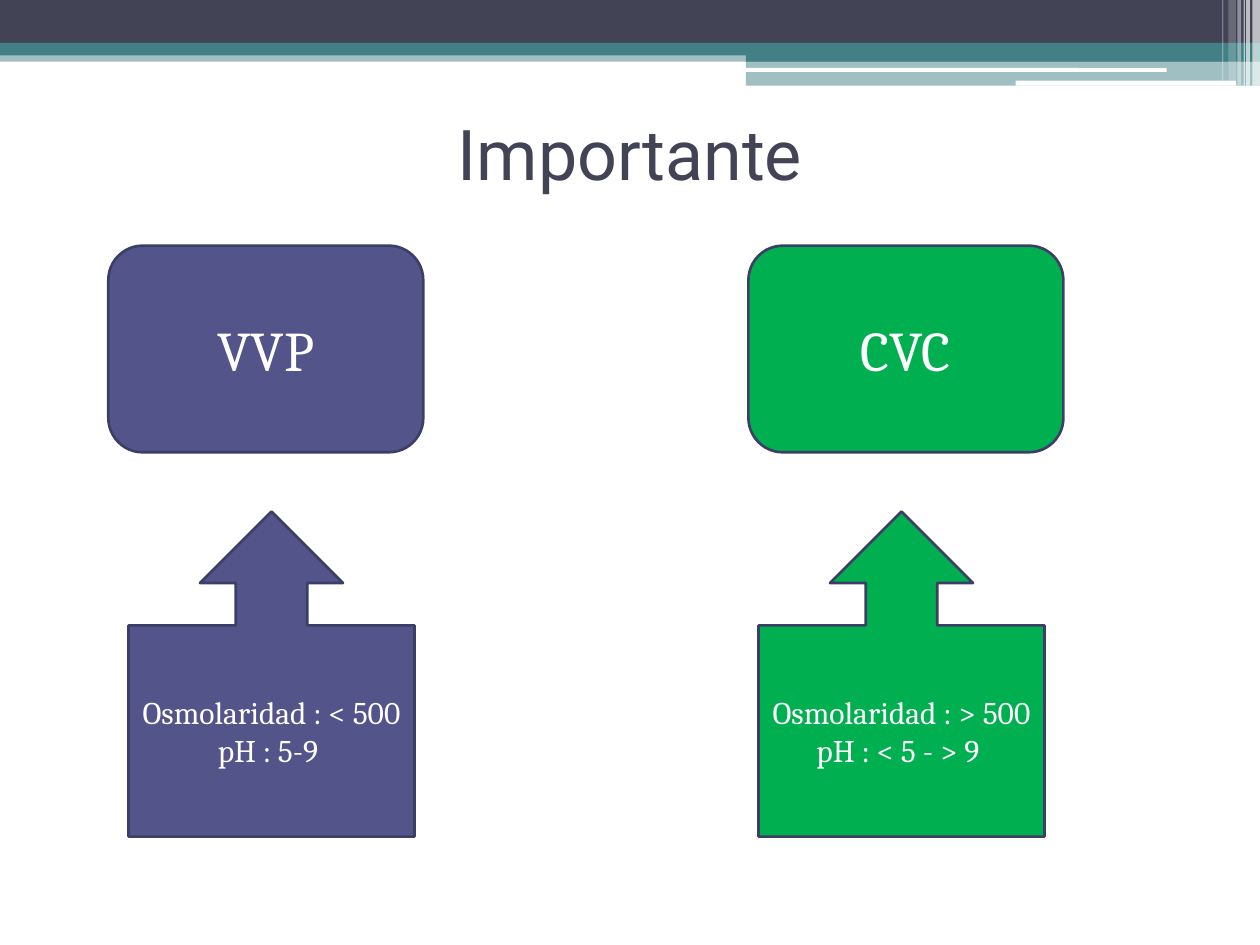
"""Build the "Importante" slide comparing VVP and CVC osmolarity and pH."""
from lxml import etree
from pptx import Presentation, util as u
from pptx.dml.color import RGBColor
from pptx.enum import shapes, text
from pptx.oxml.ns import qn

KINDS = shapes.MSO_SHAPE
TEAL, SLATE, WHITE = "438086", "424456", "FFFFFF"
PURPLE, GREEN, OUTLINE = "53548A", "00B050", "3D3E66"


def add_block(page, kind, place, fill, opacity=100):
    block = page.shapes.add_shape(kind, *map(u.Inches, place))
    block.shadow.inherit = False
    block.fill.solid()
    block.fill.fore_color.rgb = RGBColor.from_string(fill)
    block.line.fill.background()
    if opacity < 100:
        color = next(block.element.spPr.iter(qn("a:srgbClr")))
        etree.SubElement(color, qn("a:alpha"), val=str(opacity * 1000))
    return block


def write_lines(box, lines, size, font, color):
    frame = box.text_frame
    frame.word_wrap = True
    frame.vertical_anchor = text.MSO_ANCHOR.MIDDLE
    style = {"size": u.Pt(size), "name": font}
    for index, line in enumerate(lines):
        para = frame.paragraphs[0] if index == 0 else frame.add_paragraph()
        para.alignment = text.PP_ALIGN.CENTER
        span = para.add_run()
        span.text = line
        for name, value in style.items():
            setattr(span.font, name, value)
        span.font.color.rgb = RGBColor.from_string(color)


deck = Presentation()
deck.slide_width, deck.slide_height = u.Inches(10), u.Inches(7.5)
page = deck.slides.add_slide(deck.slide_layouts[6])

header_bands = [
    ((0, 0.4, 10, 0.09), TEAL, 50),
    ((0, 0, 10, 0.34), SLATE, 100),
    ((0, 0.34, 10, 0.1), TEAL, 100),
    ((5.92, 0.39, 4.08, 0.1), TEAL, 100),
    ((5.92, 0.48, 4.08, 0.2), TEAL, 50),
]
for place, fill, opacity in header_bands:
    add_block(page, KINDS.RECTANGLE, place, fill, opacity)

for place in [(5.91, 0.54, 3.35, 0.03), (8.06, 0.64, 1.75, 0.04)]:
    add_block(page, KINDS.ROUNDED_RECTANGLE, place, WHITE)

corner_stripes = [
    (9.94, 0.06, 0.68, 65),
    (9.89, 0.03, 0.68, 65),
    (9.87, 0.01, 0.68, 60),
    (9.82, 0.03, 0.68, 40),
    (9.75, 0.06, 0.64, 20),
    (9.7, 0.01, 0.64, 30),
]
for left, width, height, opacity in corner_stripes:
    add_block(page, KINDS.RECTANGLE, (left, 0, width, height), WHITE, opacity)

title = page.shapes.add_textbox(*map(u.Inches, (0.5, 0.7, 9, 1.02)))
write_lines(title, ["Importante"], 40, "Roboto", SLATE)

routes = [
    (PURPLE, 0.86, "VVP", 1.02, ["Osmolaridad : < 500", "pH : 5-9 "]),
    (GREEN, 5.94, "CVC", 6.02, ["Osmolaridad : > 500", "pH : < 5 - > 9 "]),
]
for fill, name_left, name, callout_left, limits in routes:
    cards = [
        (KINDS.ROUNDED_RECTANGLE, (name_left, 1.95, 2.5, 1.64), [name], 32),
        (KINDS.UP_ARROW_CALLOUT, (callout_left, 4.06, 2.27, 2.58), limits, 18),
    ]
    for kind, place, lines, size in cards:
        card = add_block(page, kind, place, fill)
        card.line.color.rgb = RGBColor.from_string(OUTLINE)
        card.line.width = u.Pt(1.5)
        write_lines(card, lines, size, "Cambria", WHITE)

deck.save("out.pptx")
